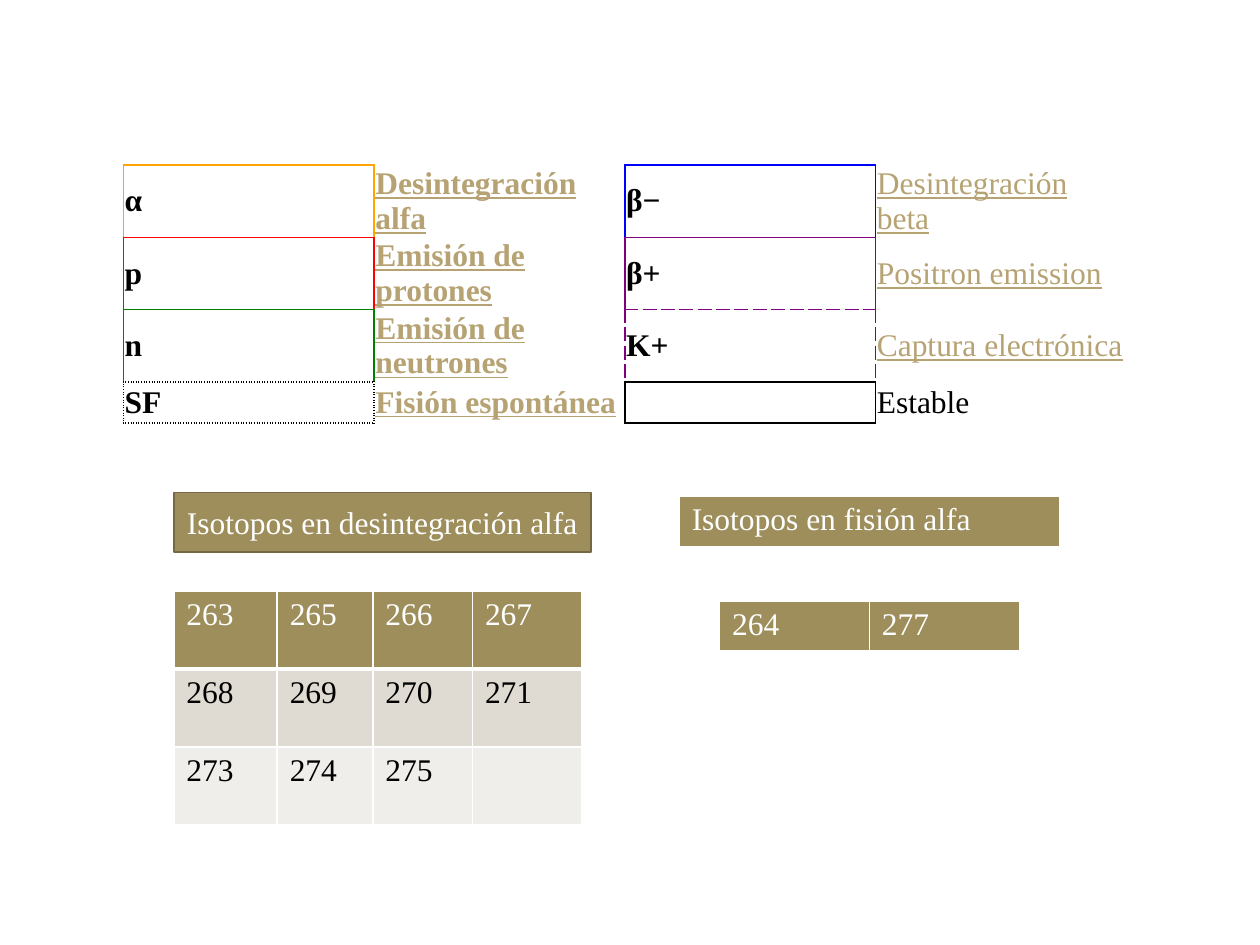
from lxml.etree import SubElement
from pptx import Presentation
from pptx.dml.color import RGBColor
from pptx.enum.shapes import MSO_SHAPE
from pptx.enum.text import MSO_ANCHOR, PP_ALIGN
from pptx.oxml.ns import qn
from pptx.util import Inches, Pt

COLORS = {
    "white": "FFFFFF", "black": "000000", "link": "B6A272",
    "header": "9E8E5C", "outline": "756944", "band": "DFDBD2", "light": "F0EEEA",
    "orange": "FFA500", "red": "FF0000", "green": "008000",
    "blue": "0000FF", "purple": "800080",
}
SIDES = {"left": "a:lnL", "right": "a:lnR", "top": "a:lnT", "bottom": "a:lnB"}


class SlideBuilder:
    font_name = "Times New Roman"
    font_size = Pt(18)

    def __init__(self, presentation):
        self.slide = presentation.slides.add_slide(presentation.slide_layouts[6])

    def color(self, name):
        return RGBColor.from_string(COLORS[name])

    def add_text(self, text_frame, text, color, bold=False, underline=False):
        paragraph = text_frame.paragraphs[0]
        paragraph.font.size = self.font_size
        if text:
            run = paragraph.add_run()
            run.text = text
            run.font.name = self.font_name
            run.font.size = self.font_size
            run.font.bold = bold
            run.font.underline = underline
            run.font.color.rgb = self.color(color)
        return paragraph

    def table(self, left, top, widths, heights):
        frame = self.slide.shapes.add_table(
            len(heights), len(widths), Inches(left), Inches(top),
            Inches(sum(widths)), Inches(sum(heights)))
        table = frame.table
        table.first_row = table.horz_banding = False
        for column, width in zip(table.columns, widths):
            column.width = Inches(width)
        for row, height in zip(table.rows, heights):
            row.height = Inches(height)
        return table

    def cell(self, cell, text, color, fill, borders, inset=None, **style):
        """Borders map a side to (color, width, dash); they precede the fill."""
        properties = cell._tc.get_or_add_tcPr()
        for side, tag in SIDES.items():
            if side in borders:
                name, width, dash = borders[side]
                line = SubElement(properties, qn(tag), w=str(Pt(width)))
                solid = SubElement(line, qn("a:solidFill"))
                SubElement(solid, qn("a:srgbClr"), val=COLORS[name])
                SubElement(line, qn("a:prstDash"), val=dash)
        cell.fill.solid()
        cell.fill.fore_color.rgb = self.color(fill)
        if inset is not None:
            cell.margin_left = cell.margin_right = Inches(inset)
            cell.margin_top = cell.margin_bottom = Inches(inset)
            cell.vertical_anchor = MSO_ANCHOR.MIDDLE
        self.add_text(cell.text_frame, text, color, **style)

    def legend(self, left, top, column_width, heights, groups):
        """Pairs of columns: a framed symbol and the decay it stands for."""
        table = self.table(left, top, [column_width] * 2 * len(groups), heights)
        for group, entries in enumerate(groups):
            for row, (symbol, label, name, dash, style) in enumerate(entries):
                line = (name, 1, dash)
                below = entries[min(row + 1, len(entries) - 1)]
                frame = dict.fromkeys(SIDES, line)
                frame["bottom"] = (below[2], 1, below[3])
                self.cell(table.cell(row, 2 * group), symbol, "black", "white",
                          frame, inset=0.01, bold=True)
                sides = {"left": line}
                if group + 1 < len(groups):
                    following = groups[group + 1][row]
                    sides["right"] = (following[2], 1, following[3])
                label_color = "link" if style["underline"] else "black"
                self.cell(table.cell(row, 2 * group + 1), label, label_color,
                          "white", sides, inset=0.01, **style)

    def isotopes(self, left, top, widths, row_height, rows):
        """Header row in a dark fill, then bands."""
        table = self.table(left, top, widths, [row_height] * len(rows))
        fills = ["header", "band", "light"]
        for row, values in enumerate(rows):
            borders = dict.fromkeys(SIDES, ("white", 1, "solid"))
            if row == 0:
                borders["bottom"] = ("white", 3, "solid")
            elif row == 1:
                borders["top"] = ("white", 3, "solid")
            for column, value in enumerate(values):
                self.cell(table.cell(row, column), value,
                          "black" if row else "white", fills[row], borders)

    def title_box(self, left, top, width, height, text):
        shape = self.slide.shapes.add_shape(
            MSO_SHAPE.RECTANGLE, Inches(left), Inches(top), Inches(width), Inches(height))
        shape.shadow.inherit = False
        shape.fill.solid()
        shape.fill.fore_color.rgb = self.color("header")
        shape.line.color.rgb = self.color("outline")
        shape.line.width = Pt(0.85)
        shape.text_frame.word_wrap = True
        shape.text_frame.vertical_anchor = MSO_ANCHOR.MIDDLE
        self.add_text(shape.text_frame, text, "white").alignment = PP_ALIGN.CENTER


def main():
    presentation = Presentation()
    presentation.slide_width = Inches(10)
    presentation.slide_height = Inches(7.5)
    builder = SlideBuilder(presentation)

    # Legend of decay modes
    strong = {"bold": True, "underline": True}
    link = {"bold": False, "underline": True}
    plain = {"bold": False, "underline": False}
    builder.legend(0.98, 1.31, 1.99, [0.57, 0.57, 0.57, 0.3], [
        [("α", "Desintegración alfa", "orange", "solid", strong),
         ("p", "Emisión de protones", "red", "solid", strong),
         ("n", "Emisión de neutrones", "green", "solid", strong),
         ("SF", "Fisión espontánea", "black", "dot", strong)],
        [("β−", "Desintegración beta", "blue", "solid", link),
         ("β+", "Positron emission", "purple", "solid", link),
         ("K+", "Captura electrónica", "purple", "dash", link),
         ("", "Estable", "black", "solid", plain)],
    ])

    # Alpha decay isotopes
    builder.title_box(1.38, 3.91, 3.31, 0.47, "Isotopos en desintegración alfa")
    builder.isotopes(1.38, 4.69, [0.82, 0.76, 0.79, 0.87], 0.62, [
        ["263", "265", "266", "267"],
        ["268", "269", "270", "271"],
        ["273", "274", "275", ""],
    ])

    # Fission isotopes
    builder.isotopes(5.71, 4.77, [1.19, 1.19], 0.41, [["264", "277"]])
    builder.isotopes(5.39, 3.94, [3.02], 0.41, [["Isotopos en fisión alfa"]])

    presentation.save("out.pptx")


if __name__ == "__main__":
    main()
